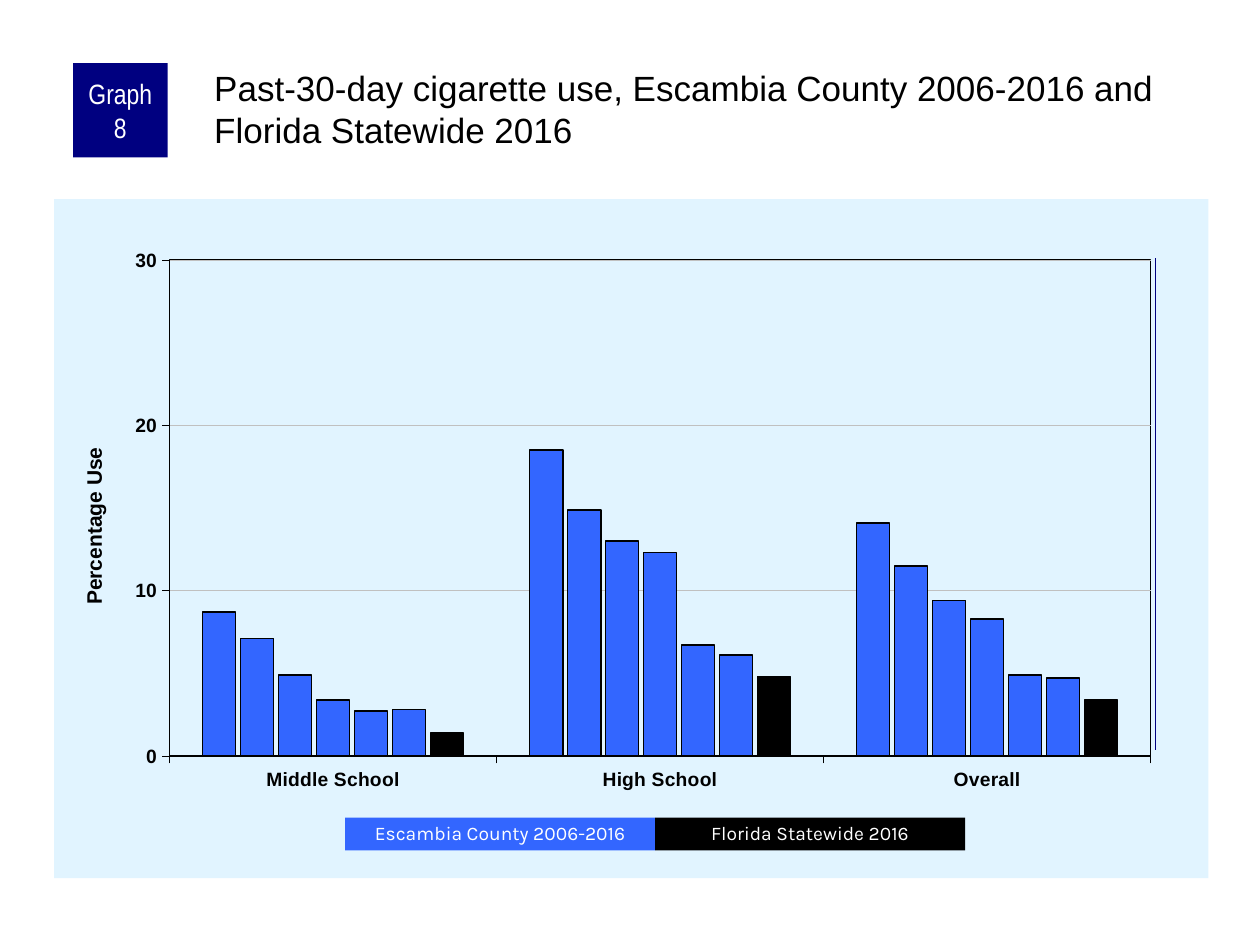
from lxml import etree
from pptx import Presentation
from pptx import util as u
from pptx.chart.data import CategoryChartData
from pptx.dml.color import RGBColor
from pptx.enum import chart as ch, shapes, text
from pptx.oxml import parse_xml
from pptx.oxml.ns import nsdecls, qn

COLORS = {"navy": "000080", "blue": "3366FF", "black": "000000",
          "white": "FFFFFF", "panel": "E1F4FF", "grid": "C0C0C0"}


def manual_layout(x, y, w=None, h=None):
    """Layout element in fractions of the chart; w and h size the inner plot."""
    target = '<c:layoutTarget val="inner"/>' if w else ""
    size = f'<c:w val="{w}"/><c:h val="{h}"/>' if w else ""
    return parse_xml(
        f'<c:layout {nsdecls("c")}><c:manualLayout>{target}'
        f'<c:xMode val="edge"/><c:yMode val="edge"/>'
        f'<c:x val="{x}"/><c:y val="{y}"/>{size}</c:manualLayout></c:layout>')


def area_format(fill, line):
    """Fill and outline of a chart area, each a colour or None."""
    def paint(color):
        if color is None:
            return "<a:noFill/>"
        return f'<a:solidFill><a:srgbClr val="{COLORS[color]}"/></a:solidFill>'
    return parse_xml(f'<c:spPr {nsdecls("c", "a")}>{paint(fill)}'
                     f'<a:ln w="12700">{paint(line)}</a:ln></c:spPr>')


class GraphSlide:
    def __init__(self, prs):
        self.slide = prs.slides.add_slide(prs.slide_layouts[6])
        self.items = self.slide.shapes

    @staticmethod
    def rgb(name):
        return RGBColor.from_string(COLORS[name])

    def font(self, font, size, color="black", name="Arial", bold=False):
        for key, value in {"size": u.Pt(size), "name": name, "bold": bold}.items():
            setattr(font, key, value)
        font.color.rgb = self.rgb(color)

    def line(self, line, color, width):
        line.color.rgb = self.rgb(color)
        line.width = u.Pt(width)

    def set_words(self, item, words, frame_format, para_format, **font_format):
        frame = item.text_frame
        for key, value in ({"word_wrap": True} | frame_format).items():
            setattr(frame, key, value)
        para = frame.paragraphs[0]
        for key, value in para_format.items():
            setattr(para, key, value)
        run = para.add_run()
        run.text = words
        self.font(run.font, **font_format)

    def heading(self, box, words):
        item = self.items.add_textbox(*map(u.Inches, box))
        margins = {"margin_left": u.Inches(0.03), "margin_top": u.Inches(0.03),
                   "margin_right": 0, "margin_bottom": 0}
        self.set_words(item, words, margins, {}, size=20)

    def label(self, box, words, fill, margins, spacing=None, **font_format):
        item = self.items.add_shape(shapes.MSO_SHAPE.RECTANGLE, *map(u.Inches, box))
        item.shadow.inherit = False
        item.fill.solid()
        item.fill.fore_color.rgb = self.rgb(fill)
        item.line.fill.background()
        frame_format = {"vertical_anchor": text.MSO_ANCHOR.MIDDLE} | margins
        para_format = {"alignment": text.PP_ALIGN.CENTER, "line_spacing": spacing}
        self.set_words(item, words, frame_format, para_format, color="white",
                       **font_format)

    def rule(self, start, end, color, width):
        item = self.items.add_connector(shapes.MSO_CONNECTOR.STRAIGHT,
                                        *map(u.Inches, start + end))
        self.line(item.line, color, width)
        etree.SubElement(item._element.spPr, qn("a:effectLst"))

    def column_chart(self, box, categories, series, plot_box, axis_title):
        data = CategoryChartData()
        data.categories = categories
        for number, (values, _) in enumerate(series, 1):
            data.add_series(f"Series {number}", values)
        chart = self.items.add_chart(ch.XL_CHART_TYPE.COLUMN_CLUSTERED,
                                     *map(u.Inches, box), data).chart
        chart.has_title = chart.has_legend = False
        self.font(chart.font, 8)

        # Columns
        plot = chart.plots[0]
        for key, value in {"gap_width": 200, "overlap": -15,
                           "vary_by_categories": False}.items():
            setattr(plot, key, value)
        for column, (_, color) in zip(plot.series, series):
            column.invert_if_negative = False
            column.format.fill.solid()
            column.format.fill.fore_color.rgb = self.rgb(color)
            self.line(column.format.line, "black", 1)

        # Axes
        for axis in (chart.category_axis, chart.value_axis):
            axis.major_tick_mark = ch.XL_TICK_MARK.OUTSIDE
            self.font(axis.tick_labels.font, 11, bold=True)
            self.line(axis.format.line, "black", 0.25)
        percent = chart.value_axis
        for key, value in {"minimum_scale": 0, "maximum_scale": 30, "major_unit": 10,
                           "has_major_gridlines": True}.items():
            setattr(percent, key, value)
        self.line(percent.major_gridlines.format.line, "grid", 0.25)
        title = percent.axis_title
        run = title.text_frame.paragraphs[0].add_run()
        run.text = axis_title
        self.font(run.font, 12, bold=True)

        # Panel, plot frame and fixed positions
        title_xml = title._element
        area = chart._chartSpace.chart.plotArea
        for parent in (title_xml, area):
            for old in parent.findall(qn("c:layout")):
                parent.remove(old)
        title_xml.find(qn("c:tx")).addnext(manual_layout(0.02, 0.36))
        area.insert(0, manual_layout(*plot_box))
        area.append(area_format(None, "black"))
        chart._chartSpace.chart.addnext(area_format("panel", None))


def main():
    prs = Presentation()
    prs.slide_width, prs.slide_height = u.Inches(10), u.Inches(7.5)
    graph = GraphSlide(prs)

    # Cigarette use by school level: one series per survey year, then the state
    county = [(8.7, 18.5, 14.1), (7.1, 14.9, 11.5), (4.9, 13, 9.4),
              (3.4, 12.3, 8.3), (2.7, 6.7, 4.9), (2.8, 6.1, 4.7)]
    state = (1.4, 4.8, 3.4)
    series = [(values, "blue") for values in county] + [(state, "black")]
    graph.column_chart((0.43, 1.58, 9.16, 5.39),
                       ["Middle School", "High School", "Overall"], series,
                       (0.10, 0.09, 0.85, 0.73), "Percentage Use")
    graph.rule((9.17, 2.05), (9.17, 5.95), "navy", 1)

    # Graph number and heading
    graph.label((0.58, 0.5, 0.75, 0.75), "Graph 8", "navy",
                {"margin_left": u.Inches(0.05), "margin_top": 0,
                 "margin_right": u.Inches(0.05), "margin_bottom": 0},
                size=16, name="Arial Narrow")
    graph.heading((1.67, 0.5, 7.92, 0.83),
                  "Past-30-day cigarette use, Escambia County 2006-2016 "
                  "and Florida Statewide 2016")

    # Key
    key_left, key_width = 2.74, 2.46
    keys = [("Escambia County 2006-2016", "blue"), ("Florida Statewide 2016", "black")]
    for place, (words, color) in enumerate(keys):
        graph.label((key_left + place * key_width, 6.49, key_width, 0.26),
                    words, color, {}, spacing=0.9, size=11, name="Karla")

    prs.save("out.pptx")


if __name__ == "__main__":
    main()
